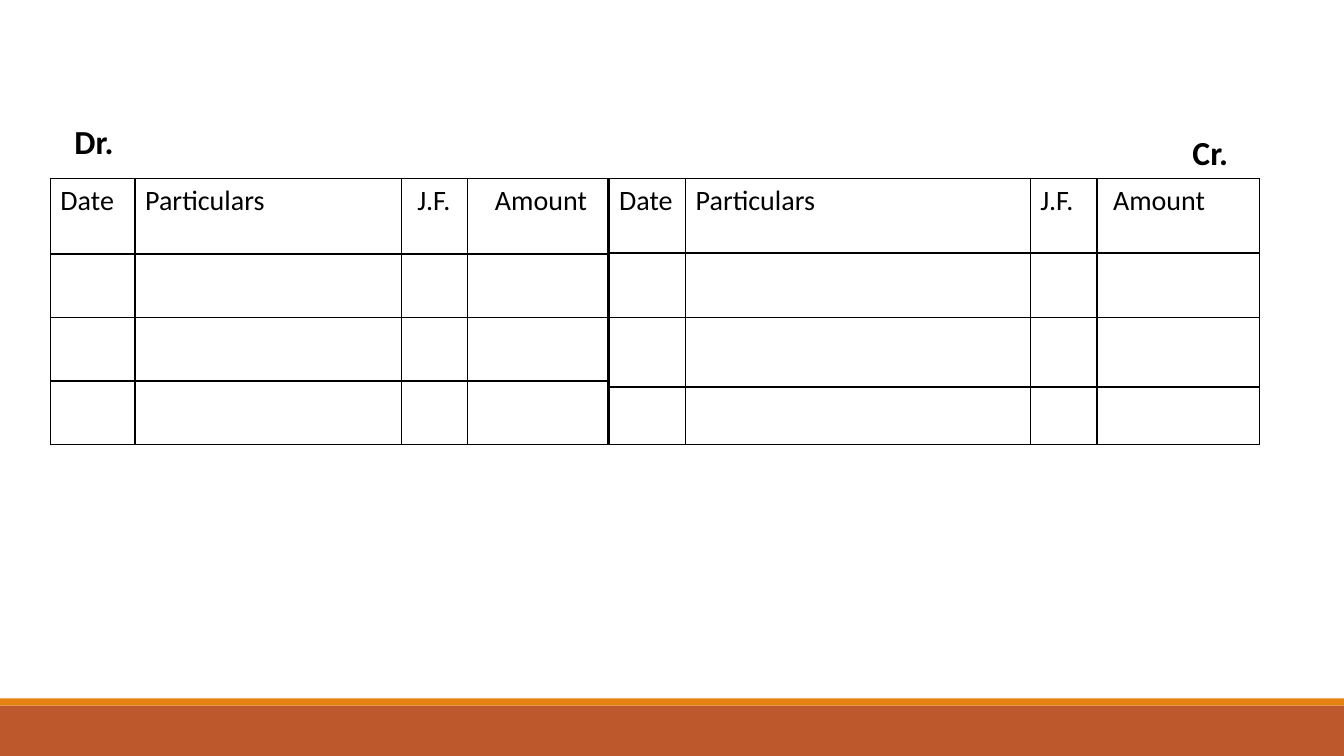
from lxml.etree import SubElement
from pptx import Presentation
from pptx.dml.color import RGBColor
from pptx.enum.shapes import MSO_SHAPE
from pptx.enum.text import MSO_AUTO_SIZE, PP_ALIGN
from pptx.oxml.ns import qn
from pptx.util import Inches, Pt

BLACK = "000000"
HEADINGS = ["Date", "Particulars", "J.F.", "Amount"]


def color(hex_code):
    """Turn a hex string into a colour."""
    return RGBColor.from_string(hex_code)


def write(frame, text, size=20, bold=False, align=PP_ALIGN.LEFT, font="Calibri", fill=BLACK):
    """Write one formatted paragraph into a text frame."""
    paragraph = frame.paragraphs[0]
    paragraph.alignment = align
    run = paragraph.add_run()
    run.text = text
    run.font.name = font
    run.font.size = Pt(size)
    run.font.bold = bold
    run.font.color.rgb = color(fill)


def add_band(slide, left, top, width, height, fill):
    """Draw one plain footer band."""
    band = slide.shapes.add_shape(
        MSO_SHAPE.RECTANGLE, Inches(left), Inches(top), Inches(width), Inches(height))
    band.shadow.inherit = False
    band.fill.solid()
    band.fill.fore_color.rgb = color(fill)
    band.line.fill.background()


def add_footer(slide, left, top, width, height, stripe=0.07):
    """Draw the footer with a thin stripe along its top."""
    add_band(slide, left, top + stripe, width, height - stripe, "BD582C")
    add_band(slide, left, top, width, stripe, "E48312")


def add_side_label(slide, left, top, width, height, text, align):
    """Place the label above one side of the account."""
    label = slide.shapes.add_textbox(
        Inches(left), Inches(top), Inches(width), Inches(height))
    label.text_frame.word_wrap = True
    label.text_frame.auto_size = MSO_AUTO_SIZE.SHAPE_TO_FIT_TEXT
    write(label.text_frame, text, size=24, bold=True, align=align)


def outline(cell, width=1):
    """Give a cell black borders and no fill."""
    cell.fill.background()
    properties = cell._tc.get_or_add_tcPr()
    for position, edge in enumerate(("a:lnL", "a:lnR", "a:lnT", "a:lnB")):
        border = SubElement(properties, qn(edge), w=str(Pt(width)))
        solid = SubElement(border, qn("a:solidFill"))
        SubElement(solid, qn("a:srgbClr"), val=BLACK)
        properties.insert(position, border)


def add_ledger(slide, left, top, columns, rows, indents):
    """Draw one side of the account as a ruled table with a heading row."""
    ledger = slide.shapes.add_table(
        len(rows), len(columns), Inches(left), Inches(top),
        Inches(sum(columns)), Inches(sum(rows))).table
    ledger.first_row = False
    ledger.horz_banding = False
    for column, width in zip(ledger.columns, columns):
        column.width = Inches(width)
    for row, height in zip(ledger.rows, rows):
        row.height = Inches(height)
    for cell in ledger.iter_cells():
        outline(cell)
    for cell, heading, indent in zip(ledger.rows[0].cells, HEADINGS, indents):
        cell.margin_left = Inches(0.1 + indent)
        write(cell.text_frame, heading)


def add_account(slide, left, top):
    """Place the debit and credit sides next to each other with their labels."""
    credit_left = left + 5.54
    add_ledger(slide, left, top, [0.84, 2.64, 0.66, 1.39],
               [0.75, 0.63, 0.63, 0.63], [0, 0, 0.06, 0.17])
    add_ledger(slide, credit_left, top, [0.76, 3.42, 0.66, 1.61],
               [0.74, 0.64, 0.69, 0.57], [0, 0, 0, 0.06])
    add_side_label(slide, left + 0.14, top - 0.62, 1.27, 0.5, "Dr.", PP_ALIGN.LEFT)
    add_side_label(slide, credit_left + 5.66, top - 0.51, 0.58, 0.5, "Cr.", PP_ALIGN.RIGHT)


def main():
    """Build and save the slide."""
    deck = Presentation()
    deck.slide_width, deck.slide_height = Inches(13.33), Inches(7.5)
    slide = deck.slides.add_slide(deck.slide_layouts[6])
    add_footer(slide, 0, 6.93, 13.33, 0.57)
    add_account(slide, 0.5, 1.77)
    deck.save("out.pptx")


if __name__ == "__main__":
    main()
